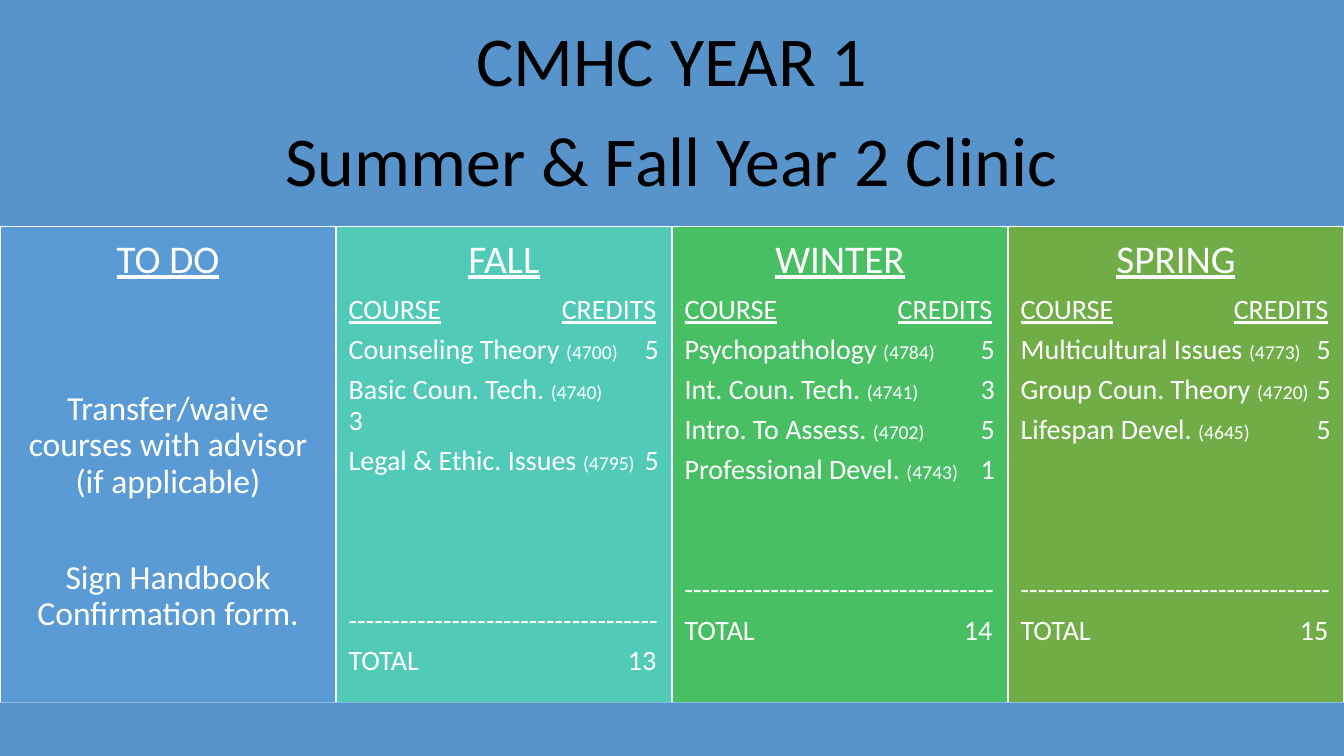
"""Build the course plan slide for the first year."""
from dataclasses import dataclass

from lxml.etree import SubElement
from pptx import Presentation
from pptx.dml.color import RGBColor
from pptx.enum.shapes import MSO_SHAPE
from pptx.enum.text import MSO_ANCHOR, MSO_AUTO_SIZE, PP_ALIGN
from pptx.oxml.ns import qn
from pptx.util import Pt

PX = 9525
WIDE, HIGH = 1280, 720
TOP, TALL = 216, 453
HEAD_TAB, ROW_TAB, SUM_TAB = 203, 282, 266


@dataclass(frozen=True)
class Theme:
    font: str = "Calibri"
    band: str = "5794CB"
    ink: str = "000000"
    white: str = "FFFFFF"
    cols: tuple = ("5B9BD5", "52CAB8", "49BF64", "70AD47")
    title: int = 50
    head: int = 28
    task: int = 24
    row: int = 20
    code: int = 14
    lines: float = 0.9
    after: float = 0.35
    pitch: float = 1.43


class Deck:
    def __init__(self, theme):
        self.theme = theme
        self.show = Presentation()
        self.show.slide_width, self.show.slide_height = WIDE * PX, HIGH * PX
        self.slide = self.show.slides.add_slide(self.show.slide_layouts[4])

    def place(self, shape, box, fill, line=None):
        shape.left, shape.top, shape.width, shape.height = [n * PX for n in box]
        shape.fill.solid()
        shape.fill.fore_color.rgb = RGBColor.from_string(fill)
        if line:
            shape.line.color.rgb = RGBColor.from_string(line)
            shape.line.width = Pt(1)
        else:
            shape.line.fill.background()

    def frame(self, shape, inset, anchor):
        frame = shape.text_frame
        frame.word_wrap = True
        frame.auto_size = MSO_AUTO_SIZE.NONE
        frame.vertical_anchor = anchor
        frame.margin_left = frame.margin_right = inset * PX
        frame.margin_top = frame.margin_bottom = inset * PX
        return frame

    def para(self, frame, parts, size, color, tab=None, under=False, gap=0):
        first = frame.paragraphs[0]
        para = frame.add_paragraph() if first.runs else first
        para.alignment = PP_ALIGN.LEFT if tab else PP_ALIGN.CENTER
        para.line_spacing = self.theme.lines
        para.space_before = Pt(round(gap * size * self.theme.pitch, 1))
        para.space_after = Pt(round(size * self.theme.after, 1))
        props = para._p.get_or_add_pPr()
        props.set("marL", "0")
        props.set("indent", "0")
        if tab:
            props.set("defTabSz", str(tab * PX))
        SubElement(props, qn("a:buNone"))
        font = para.font
        font.name, font.size = self.theme.font, Pt(size)
        font.bold, font.underline = False, under
        font.color.rgb = RGBColor.from_string(color)
        for text, small in parts:
            if text == "\n":
                para.add_line_break()
                continue
            run = para.add_run()
            run.text = text
            if small:
                run.font.size = Pt(self.theme.code)

    def title(self, lines):
        shape = self.slide.shapes.title
        self.place(shape, (0, 0, WIDE, TOP), self.theme.band)
        frame = self.frame(shape, 20, MSO_ANCHOR.MIDDLE)
        for line in lines:
            self.para(frame, [(line, False)], self.theme.title, self.theme.ink)

    def panel(self, col, head):
        wide = WIDE // len(self.theme.cols)
        shape = self.slide.placeholders[col + 1]
        box = (col * wide, TOP, wide, TALL)
        self.place(shape, box, self.theme.cols[col], self.theme.white)
        frame = self.frame(shape, 12, MSO_ANCHOR.TOP)
        self.para(frame, [(head, False)], self.theme.head, self.theme.white, under=True)
        return frame

    def tasks(self, col, head, items):
        frame = self.panel(col, head)
        for text, gap in items:
            self.para(frame, [(text, False)], self.theme.task, self.theme.white, gap=gap)

    def term(self, col, head, rows, gap):
        frame = self.panel(col, head)

        def add(tab, *parts, **style):
            self.para(frame, parts, self.theme.row, self.theme.white, tab, **style)

        add(HEAD_TAB, ("COURSE\tCREDITS", False), under=True)
        for name, code, split, cred in rows:
            add(ROW_TAB, (name + " ", False), (f"({code})", True),
                (split, False), (str(cred), False))
        add(ROW_TAB, ("-" * 36, False), gap=gap)
        add(SUM_TAB, (f"TOTAL\t{sum(row[-1] for row in rows)}", False))

    def bar(self, top):
        box = (0, top, WIDE, HIGH - top)
        shape = self.slide.shapes.add_shape(MSO_SHAPE.RECTANGLE, *[n * PX for n in box])
        shape.shadow.inherit = False
        self.place(shape, box, self.theme.band)


TASKS = [
    ("Transfer/waive courses with advisor (if applicable)", 2),
    ("Sign Handbook Confirmation form.", 1),
]
TERMS = [
    ("FALL", 3, [
        ("Counseling Theory", 4700, "\t", 5),
        ("Basic Coun. Tech.", 4740, "\n", 3),
        ("Legal & Ethic. Issues", 4795, "\t", 5),
    ]),
    ("WINTER", 2, [
        ("Psychopathology", 4784, "\t", 5),
        ("Int. Coun. Tech.", 4741, "\t", 3),
        ("Intro. To Assess.", 4702, "\t", 5),
        ("Professional Devel.", 4743, "\t", 1),
    ]),
    ("SPRING", 3, [
        ("Multicultural Issues", 4773, "\t", 5),
        ("Group Coun. Theory", 4720, "\t", 5),
        ("Lifespan Devel.", 4645, "\t", 5),
    ]),
]


def main():
    deck = Deck(Theme())
    deck.title(["CMHC YEAR 1", "Summer & Fall Year 2 Clinic"])
    deck.tasks(0, "TO DO", TASKS)
    for col, (head, gap, rows) in enumerate(TERMS, 1):
        deck.term(col, head, rows, gap)
    deck.bar(TOP + TALL)
    deck.show.save("out.pptx")


if __name__ == "__main__":
    main()
